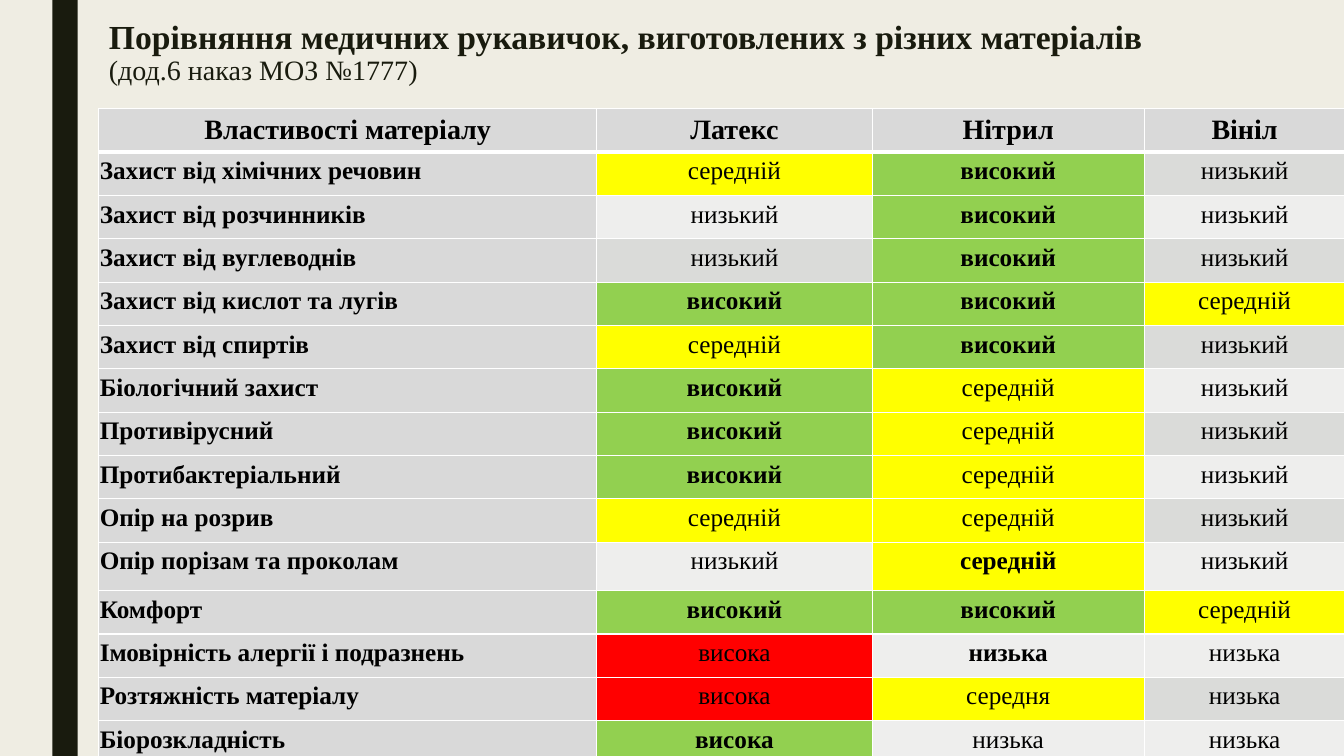
from typing import NamedTuple

from lxml import etree
from pptx import Presentation
from pptx.dml.color import RGBColor
from pptx.enum.shapes import MSO_SHAPE
from pptx.enum.text import MSO_ANCHOR, MSO_AUTO_SIZE, PP_ALIGN
from pptx.oxml.ns import qn
from pptx.util import Inches, Pt

RECT = MSO_SHAPE.RECTANGLE
TOP = MSO_ANCHOR.TOP
FIXED = MSO_AUTO_SIZE.NONE
LEFT, MID = PP_ALIGN.LEFT, PP_ALIGN.CENTER

FACE = "Times New Roman"
DARK, BLACK, WHITE = "191B0E", "000000", "FFFFFF"
PAPER, HEAD = "EFEDE3", "D9D9D9"
BANDS = ("EEEEED", "DADBD9")
GRID = Inches(0.01)
WIDE, HIGH = 1333, 750
COLS = (494, 273, 270, 199)
ROW, TALL, TALL_AT = 43, 48, 10


class Rate(NamedTuple):
    male: str
    female: str
    hue: str = ""
    bold: bool = False


class Trait(NamedTuple):
    name: str
    rates: tuple[Rate, Rate, Rate]
    female: bool = False


class Look(NamedTuple):
    hue: str
    size: int = 18
    bold: bool = False
    align: PP_ALIGN = MID
    top: int = 1
    base: int = 1


GOOD = Rate("високий", "висока", "92D050", True)
FAIR = Rate("середній", "середня", "FFFF00")
POOR = Rate("низький", "низька")
RISK = Rate("високий", "висока", "FF0000")

HEADS = ("Властивості матеріалу", "Латекс", "Нітрил", "Вініл")
TRAITS = (
    Trait("Захист від хімічних речовин", (FAIR, GOOD, POOR)),
    Trait("Захист від розчинників", (POOR, GOOD, POOR)),
    Trait("Захист від вуглеводнів", (POOR, GOOD, POOR)),
    Trait("Захист від кислот та лугів", (GOOD, GOOD, FAIR)),
    Trait("Захист від спиртів", (FAIR, GOOD, POOR)),
    Trait("Біологічний захист", (GOOD, FAIR, POOR)),
    Trait("Противірусний", (GOOD, FAIR, POOR)),
    Trait("Протибактеріальний", (GOOD, FAIR, POOR)),
    Trait("Опір на розрив", (FAIR, FAIR, POOR)),
    Trait("Опір порізам та проколам", (POOR, FAIR._replace(bold=True), POOR)),
    Trait("Комфорт", (GOOD, GOOD, FAIR)),
    Trait("Імовірність алергії і подразнень",
          (RISK, POOR._replace(bold=True), POOR), True),
    Trait("Розтяжність матеріалу", (RISK, FAIR, POOR), True),
    Trait("Біорозкладність", (GOOD, POOR, POOR), True),
)


def span(count: int) -> int:
    return count * GRID


def paint(fill, hue: str) -> None:
    fill.solid()
    fill.fore_color.rgb = RGBColor.from_string(hue)


def edge(cell, side: str, width: int) -> None:
    props = cell._tc.get_or_add_tcPr()
    line = etree.SubElement(props, qn(f"a:{side}"), w=str(Pt(width)))
    solid = etree.SubElement(line, qn("a:solidFill"))
    etree.SubElement(solid, qn("a:srgbClr"), val=WHITE)


def write(cell, text: str, look: Look) -> None:
    cell.margin_left = cell.margin_right = span(1)
    cell.margin_top = cell.margin_bottom = span(1)
    for side, width in (("lnL", 1), ("lnR", 1),
                        ("lnT", look.top), ("lnB", look.base)):
        edge(cell, side, width)
    paint(cell.fill, look.hue)
    cell.text = text
    para = cell.text_frame.paragraphs[0]
    para.alignment = look.align
    para.line_spacing = 1.15
    para.space_before = para.space_after = Pt(7.5)
    font = para.font
    font.name, font.size, font.bold = FACE, Pt(look.size), look.bold
    paint(font.fill, BLACK)


def draw_bar(slide) -> None:
    bar = slide.shapes.add_shape(RECT, span(52), 0, span(25), span(HIGH))
    bar.shadow.inherit = False
    paint(bar.fill, DARK)
    bar.line.fill.background()


def draw_title(slide) -> None:
    title = slide.shapes.title
    title.left, title.top = span(98), span(16)
    title.width, title.height = span(1215), span(69)
    frame = title.text_frame
    frame.auto_size = FIXED
    frame.vertical_anchor = TOP
    frame.word_wrap = True
    para = frame.paragraphs[0]
    para.alignment = LEFT
    para.line_spacing = 0.89
    para.font.name = FACE
    paint(para.font.fill, DARK)
    main = para.add_run()
    main.text = "Порівняння медичних рукавичок, виготовлених з різних матеріалів"
    main.font.size, main.font.bold = Pt(24), True
    para.add_line_break()
    note = para.add_run()
    note.text = "(дод.6 наказ МОЗ №1777)"
    note.font.size, note.font.bold = Pt(20), False


def draw_table(slide) -> None:
    count = len(TRAITS) + 1
    tall = ROW * (count - 1) + TALL
    table = slide.shapes.add_table(
        count, len(COLS), span(98), span(108), span(sum(COLS)), span(tall)
    ).table
    for col, width in zip(table.columns, COLS):
        col.width = span(width)
    for index, row in enumerate(table.rows):
        row.height = span(TALL if index == TALL_AT else ROW)
    for col, text in enumerate(HEADS):
        write(table.cell(0, col), text, Look(HEAD, 20, True, base=3))
    for row, trait in enumerate(TRAITS, 1):
        top = 3 if row == 1 else 1
        write(table.cell(row, 0), trait.name,
              Look(HEAD, bold=True, align=LEFT, top=top))
        for col, rate in enumerate(trait.rates, 1):
            text = rate.female if trait.female else rate.male
            hue = rate.hue or BANDS[row % 2]
            write(table.cell(row, col), text,
                  Look(hue, bold=rate.bold, top=top))


def main() -> None:
    deck = Presentation()
    deck.slide_width, deck.slide_height = span(WIDE), span(HIGH)
    slide = deck.slides.add_slide(deck.slide_layouts[5])
    paint(slide.background.fill, PAPER)
    draw_bar(slide)
    draw_title(slide)
    draw_table(slide)
    deck.save("out.pptx")


if __name__ == "__main__":
    main()
